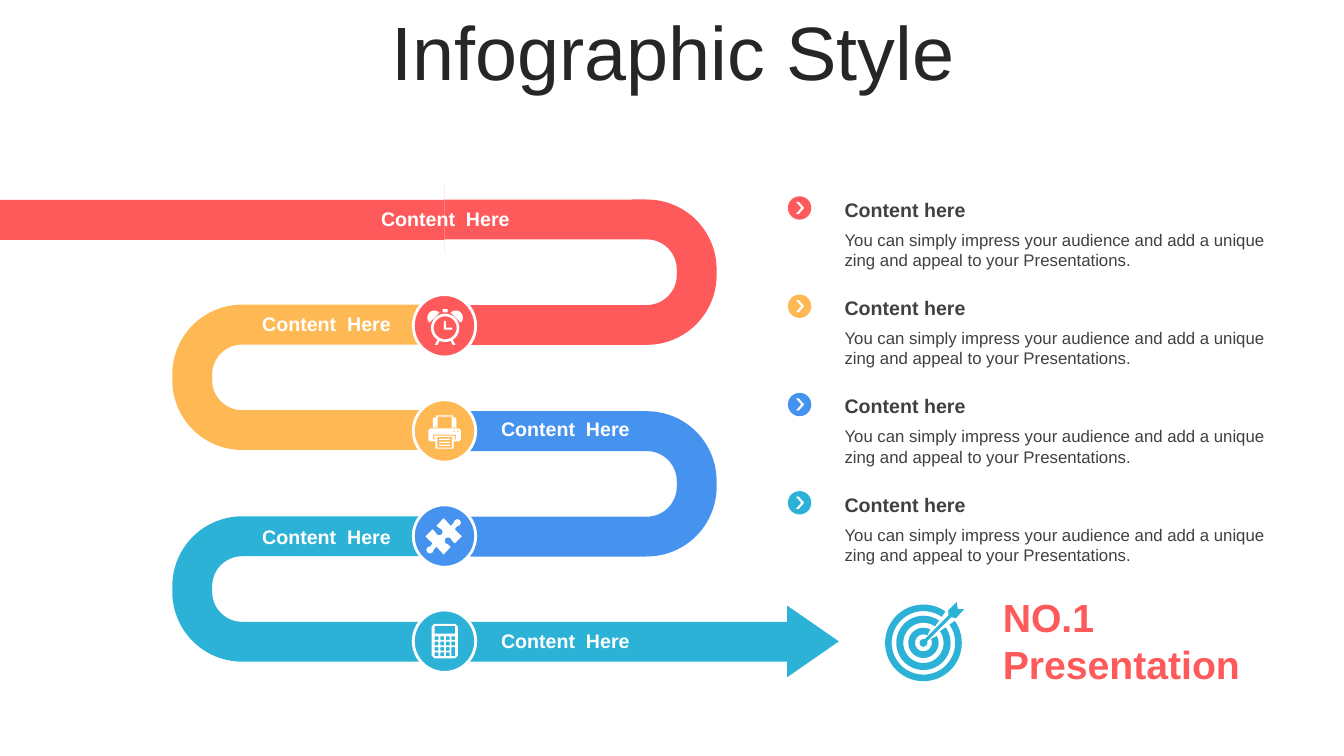
"""Build a winding ribbon infographic slide with four steps and a goal."""
import math
from dataclasses import dataclass

import pptx
import pptx.util
from pptx.dml.color import RGBColor
from pptx.enum.shapes import MSO_SHAPE
from pptx.enum.text import MSO_ANCHOR, MSO_AUTO_SIZE, PP_ALIGN

Pt = pptx.util.Pt


@dataclass(frozen=True)
class Theme:
    red: str = "FE5A5B"
    gold: str = "FFB954"
    blue: str = "4592EF"
    teal: str = "2CB2D7"
    white: str = "FFFFFF"
    ink: str = "262626"
    gray: str = "404040"
    font: str = "Arial"
    title: int = 54
    goal: int = 28
    head: int = 14
    body: int = 12


theme = Theme()
hues = [theme.red, theme.gold, theme.blue, theme.teal]


def draw(parent, kind, box, fill, turn=0, adjust=()):
    shape = parent.add_shape(kind, *[Pt(v) for v in box])
    shape.shadow.inherit = False
    shape.fill.solid()
    shape.fill.fore_color.rgb = RGBColor.from_string(fill)
    shape.line.fill.background()
    shape.rotation = turn
    for i, value in enumerate(adjust):
        shape.adjustments[i] = value
    return shape


def write(parent, text, box, size, color, bold=False, align=PP_ALIGN.LEFT,
          anchor=MSO_ANCHOR.TOP, fit=MSO_AUTO_SIZE.SHAPE_TO_FIT_TEXT):
    frame = parent.add_textbox(*[Pt(v) for v in box]).text_frame
    frame.word_wrap = True
    frame.auto_size = fit
    frame.vertical_anchor = anchor
    frame.text = text
    para = frame.paragraphs[0]
    para.alignment = align
    font = para.runs[0].font
    font.name, font.size, font.bold = theme.font, Pt(size), bold
    font.color.rgb = RGBColor.from_string(color)
    return para


deck = pptx.Presentation()
deck.slide_width, deck.slide_height = Pt(960), Pt(540)
shapes = deck.slides.add_slide(deck.slide_layouts[6]).shapes

title = write(shapes, "Infographic Style", (25.2, 11.5, 911.5, 56.9),
              theme.title, theme.ink, align=PP_ALIGN.CENTER,
              anchor=MSO_ANCHOR.MIDDLE, fit=MSO_AUTO_SIZE.NONE)
title.line_spacing = 0.9
title.space_before = Pt(10)

bends = [(357.8, 92.2), (163.4, 167.3), (357.8, 243.4), (163.4, 318.5)]
for i, (left, top) in enumerate(bends):
    bend = draw(shapes, MSO_SHAPE.U_TURN_ARROW, (left, top, 113.8, 194.4),
                hues[i], 270 if i % 2 else 90, (0.25, 0.213, 0, 0.438, 1))
    if i % 2 == 0:
        bend.element.spPr.xfrm.set("flipH", "1")
draw(shapes, MSO_SHAPE.RECTANGLE, (0, 142.8, 317.5, 28.5), theme.red)
draw(shapes, MSO_SHAPE.RECTANGLE, (317.5, 444.2, 245, 28.5), theme.teal)
draw(shapes, MSO_SHAPE.ISOSCELES_TRIANGLE, (555.2, 439.7, 51.1, 36.9),
     theme.teal, 90)

note = ("You can simply impress your audience and add a unique zing "
        "and appeal to your Presentations.")
for i, hue in enumerate(hues):
    top = 137.5 + 70.2 * i
    mark = shapes.add_group_shape().shapes
    draw(mark, MSO_SHAPE.OVAL, (562.8, top + 2.7, 16.7, 16.7), hue)
    draw(mark, MSO_SHAPE.CHEVRON, (568.6, top + 6.7, 5.8, 8.6), theme.white,
         adjust=[0.652])
    item = shapes.add_group_shape().shapes
    write(item, "Content here", (596.2, top, 335.5, 24.2), theme.head,
          theme.gray, True, anchor=MSO_ANCHOR.MIDDLE)
    write(item, note, (596.2, top + 23, 335.5, 36), theme.body, theme.gray)

write(shapes, "NO.1 Presentation", (709.2, 420.5, 204.5, 74.9), theme.goal,
      theme.red, True)

for i, hue in enumerate(hues):
    badge = draw(shapes, MSO_SHAPE.OVAL,
                 (295.2, 210.4 + 75.1 * i, 44.6, 44.6), hue)
    badge.line.color.rgb = RGBColor.from_string(theme.white)
    badge.line.width = Pt(2)

bell = [(-4, -10.9), (-5.6, -12), (-7.6, -12.4), (-9.8, -12), (-11.2, -10.9),
        (-12.4, -9), (-12.7, -7.2), (-12.4, -5.4), (-11.2, -3.7)]
leg = [(-5.4, 8.5), (-4, 9.3), (-5.4, 12.2), (-7.4, 12.2)]
hands = [(-0.8, -5), (0.6, -5), (0.6, -0.2), (5.2, -0.2), (5.2, 1.3),
         (-0.8, 1.3)]
case = [(-11.6, -1), (-10.4, -2.4), (10.4, -2.4), (11.6, -1), (11.6, 5.6),
        (10.4, 6.9), (6.5, 6.9), (6.5, 12.1), (-6.5, 12.1), (-6.5, 6.9),
        (-10.4, 6.9), (-11.6, 5.6)]
slot = [(-8.2, 2), (8.2, 2), (8.2, 5.5), (6.3, 5.5), (6.3, 4.9), (7.5, 4.9),
        (7.5, 2.7), (-7.5, 2.7), (-7.5, 4.9), (-6.3, 4.9), (-6.3, 5.5),
        (-8.2, 5.5)]
feed = [(-6, -11.7), (6, -11.7), (6, -10.3), (7.6, -10.3), (8.4, -9.2),
        (8.4, -3), (5, -3), (5, -10.8), (-5, -10.8), (-5, -3), (-8.4, -3),
        (-8.4, -9.2), (-7.6, -10.3), (-6, -10.3)]
half = [(11.5, -11.5), (12.4, -9.7), (11.5, -7.9), (9.5, -7.1), (7.9, -5),
        (13, 0), (7.9, 5), (6.1, 3.2), (4.9, 1.4), (3.1, 0.7), (1.4, 1.4),
        (0.7, 3.1), (1.4, 4.9), (3.4, 6), (5, 7.6), (0, 13), (-5.2, 7.4),
        (-7, 9.5), (-8, 11.5), (-9.8, 12.3)]
shell = [(-9.4, -10.3), (-7.4, -12.3), (7.4, -12.3), (9.4, -10.3),
         (9.4, 10.3), (7.4, 12.3), (-7.4, 12.3), (-9.4, 10.3)]
keys = [(-7.2 + 4 * c, -3.4 + 3.85 * r, -4.5 + 4 * c, -0.8 + 3.85 * r)
        for c in range(4) for r in range(4) if c < 3 or r < 2]
dart = [(23.8, -29.3), (24.5, -24.3), (29, -24), (23.2, -17.6),
        (19.8, -18.4), (2.7, -1.2), (2.9, 0), (2, 2), (0, 2.9), (-2, 2),
        (-2.9, 0), (-2, -2), (0, -2.9), (1, -2.7), (17.9, -19.7),
        (17.7, -23.2)]

icons = [
    (theme.teal, (659.6, 459.2),
     [(0, 0, 27.4, 22.7, 10), (0, 0, 19.4, 14.4, 10), (0, 0, 10.8, 6, 18)],
     [], [dart]),
    (theme.white, (318, 234.2), [(0, 0, 10.1, 8.2, 0)],
     [(-1.8, -13.3, 1.8, -11)],
     [hands, bell, leg, [(-x, y) for x, y in bell],
      [(-x, y) for x, y in leg]]),
    (theme.white, (317.6, 308.4),
     [(9.4, -0.3, 0.6, 0, 0), (7, -0.3, 0.6, 0, 0)],
     [(-5.2, 3.6, 5.2, 11.3)]
     + [(-3.9, y, 3.9, y + 0.9) for y in (5, 7.1, 9.2)],
     [case, slot, feed]),
    (theme.white, (316.9, 383.1), [], [],
     [half + [(-x, -y) for x, y in half]]),
    (theme.white, (317.7, 457.9), [],
     keys + [(4.8, 4.3, 7.5, 10.75), (-7.3, -10.8, 7.5, -5.3)], [shell]),
]
for hue, (left, top), rings, boxes, paths in icons:
    lines = list(paths)
    for l, t, r, b in boxes:
        lines.append([(l, t), (r, t), (r, b), (l, b)])
    for x, y, outer, inner, gap in rings:
        turns = [math.radians(gap - 45 + (360 - 2 * gap) * k / 48)
                 for k in range(49)]
        arc = [(outer, a) for a in turns] + [(inner, a) for a in turns[::-1]]
        lines.append([(x + d * math.cos(a), y + d * math.sin(a))
                      for d, a in arc])
    lines = [[(100 * x, 100 * y) for x, y in line] for line in lines]
    pen = shapes.build_freeform(*lines[0][0], scale=Pt(1) / 100)
    pen.add_line_segments(lines[0][1:], close=True)
    for line in lines[1:]:
        pen.move_to(*line[0])
        pen.add_line_segments(line[1:], close=True)
    icon = pen.convert_to_shape(Pt(left), Pt(top))
    icon.shadow.inherit = False
    icon.fill.solid()
    icon.fill.fore_color.rgb = RGBColor.from_string(hue)
    icon.line.fill.background()

for left, top in [(257, 144.2), (172.1, 219.2), (172.1, 370.9),
                  (342.7, 294.1), (342.7, 445.5)]:
    write(shapes, "Content  Here", (left, top, 122.4, 24.2), theme.head,
          theme.white, True, PP_ALIGN.CENTER, MSO_ANCHOR.MIDDLE)

deck.save("out.pptx")
